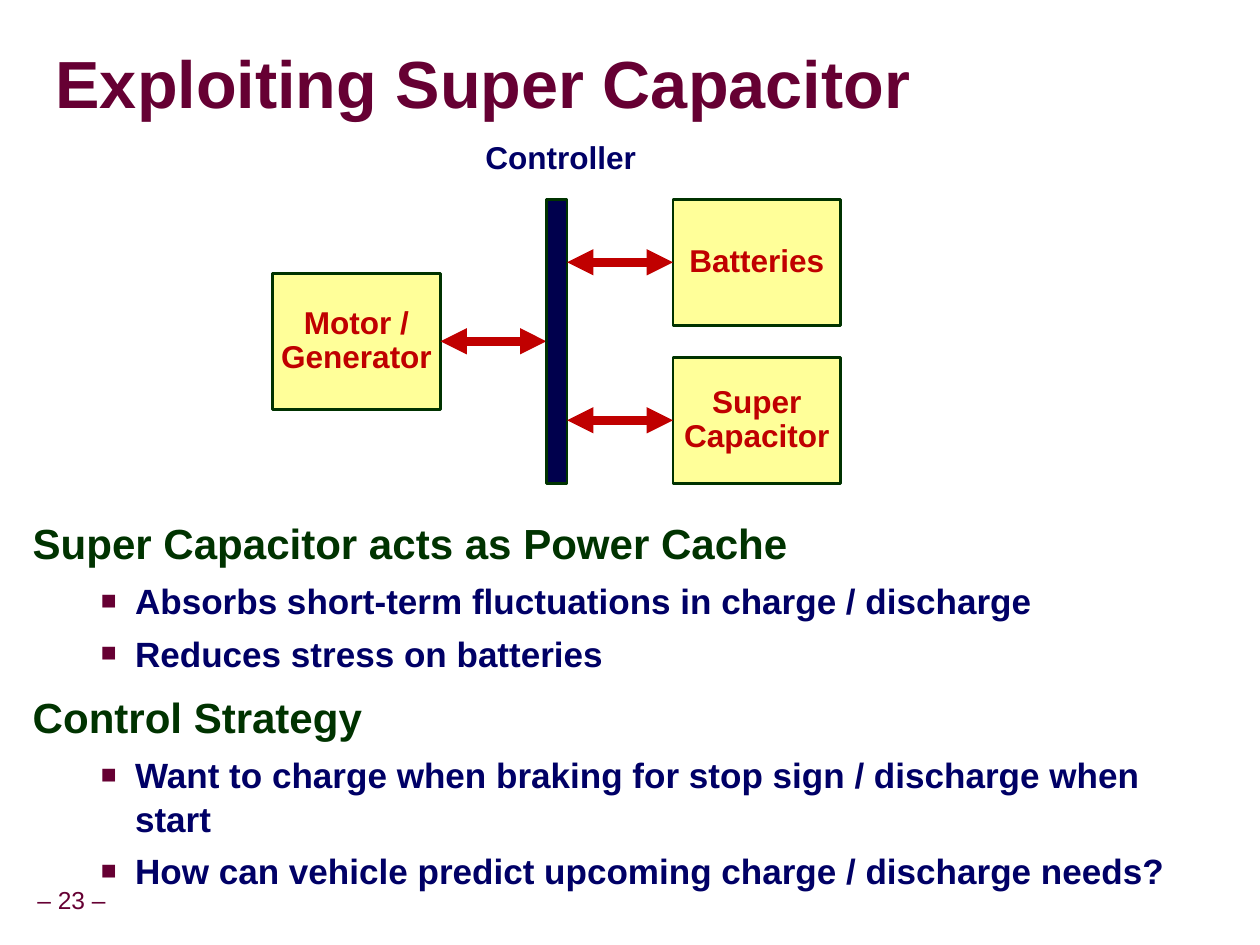
from pptx import Presentation
from pptx import util as u
from pptx.dml.color import RGBColor
from pptx.enum import shapes, text
from pptx.oxml import parse_xml
from pptx.oxml.ns import nsdecls, qn
from lxml import etree

MAROON = RGBColor(0x66, 0x00, 0x33)
GREEN = RGBColor(0x00, 0x33, 0x00)
NAVY = RGBColor(0x00, 0x00, 0x66)
DARK = RGBColor(0x00, 0x00, 0x4D)
RED = RGBColor(0xC0, 0x00, 0x00)
YELLOW = RGBColor(0xFF, 0xFF, 0x99)

TITLE = "Exploiting Super Capacitor"
PAGE = "– 23 –"
BUS = "Controller"
SOURCE = ["Motor /", "Generator"]
STORES = [["Batteries"], ["Super", "Capacitor"]]
SECTIONS = [
    ("Super Capacitor acts as Power Cache", [
        "Absorbs short-term fluctuations in charge / discharge",
        "Reduces stress on batteries"]),
    ("Control Strategy", [
        "Want to charge when braking for stop sign / discharge when start",
        "How can vehicle predict upcoming charge / discharge needs?"]),
]

BOX_W, BOX_H, SOURCE_H = 3.38, 2.54, 2.74
BUS_X, BUS_Y, BUS_W, BUS_H = 11.0, 4.01, 0.42, 5.72
GAP = 2.13

prs = Presentation()
prs.slide_width, prs.slide_height = u.Cm(25.37), u.Cm(19.02)
s = prs.slides.add_slide(prs.slide_layouts[6])


def write(tf, line, size=18, color=NAVY, bold=True, align=None, spacing=0.9,
          before=0, left=0, hang=0, bullet=False, shadow=False):
    p = tf.paragraphs[0]
    if p.runs:
        p = tf.add_paragraph()
    p.alignment, p.line_spacing, p.space_before = align, spacing, u.Pt(before)
    pPr = p._p.get_or_add_pPr()
    pPr.set("marL", str(u.Cm(left)))
    pPr.set("indent", str(-u.Cm(hang)))
    if bullet:
        clr = etree.SubElement(pPr, qn("a:buClr"))
        etree.SubElement(clr, qn("a:srgbClr"), val=str(MAROON))
        etree.SubElement(pPr, qn("a:buSzPct"), val="75000")
        etree.SubElement(pPr, qn("a:buFont"), typeface="Arial")
        etree.SubElement(pPr, qn("a:buChar"), char="■")
    r = p.add_run()
    r.text = line
    r.font.name, r.font.size, r.font.bold = "Arial", u.Pt(size), bold
    r.font.color.rgb = color
    if shadow:
        r.font.fill._xPr.find(qn("a:solidFill")).addnext(parse_xml(
            f'<a:effectLst {nsdecls("a")}><a:outerShdw dist="45720" dir="2700000">'
            '<a:srgbClr val="969696"/></a:outerShdw></a:effectLst>'))


def frame(sp, inset=(0.13, 0.13), wrap=False, anchor=text.MSO_ANCHOR.MIDDLE):
    tf = sp.text_frame
    tf.margin_left = tf.margin_right = u.Cm(inset[0])
    tf.margin_top = tf.margin_bottom = u.Cm(inset[1])
    tf.word_wrap, tf.vertical_anchor = wrap, anchor
    return tf


def label(x, y, w, h, **kw):
    return frame(s.shapes.add_textbox(u.Cm(x), u.Cm(y), u.Cm(w), u.Cm(h)), **kw)


def box(x, y, w, h, fill, lines=()):
    sp = s.shapes.add_shape(shapes.MSO_SHAPE.RECTANGLE,
                            u.Cm(x), u.Cm(y), u.Cm(w), u.Cm(h))
    sp.shadow.inherit = False
    sp.fill.solid()
    sp.fill.fore_color.rgb = fill
    sp.line.color.rgb, sp.line.width = GREEN, u.Pt(1.5)
    tf = frame(sp)
    for line in lines:
        write(tf, line, color=RED, align=text.PP_ALIGN.CENTER)


def arrow(x, y):
    c = s.shapes.add_connector(shapes.MSO_CONNECTOR.STRAIGHT,
                               u.Cm(x), u.Cm(y), u.Cm(x + GAP), u.Cm(y))
    c.line.color.rgb, c.line.width = RED, u.Pt(5)
    spPr = c._element.spPr
    ln = spPr.find(qn("a:ln"))
    for end in ("a:headEnd", "a:tailEnd"):
        etree.SubElement(ln, qn(end), type="triangle")
    etree.SubElement(spPr, qn("a:effectLst"))


write(label(0.6, 17.75, 1.68, 0.79), PAGE, size=14, color=MAROON, bold=False,
      align=text.PP_ALIGN.CENTER)
write(label(1.12, 0.69, 24.18, 2.16, inset=(0, 0), wrap=True), TITLE,
      size=38, color=MAROON, spacing=0.87, shadow=True)

body = label(0.41, 10.36, 24.13, 7.52, inset=(0.25, 0.13), wrap=True,
             anchor=text.MSO_ANCHOR.TOP)
for heading, points in SECTIONS:
    write(body, heading, size=24, color=GREEN, spacing=0.95, before=12,
          left=1.07, hang=1.07)
    for point in points:
        write(body, point, size=20, spacing=1.04, before=5,
              left=2.06, hang=0.69, bullet=True)

mid = BUS_Y + BUS_H / 2
box(BUS_X - GAP - BOX_W, mid - SOURCE_H / 2, BOX_W, SOURCE_H, YELLOW, SOURCE)
arrow(BUS_X - GAP, mid)
box(BUS_X, BUS_Y, BUS_W, BUS_H, DARK)
for i, lines in enumerate(STORES):
    y = BUS_Y + i * (BUS_H - BOX_H)
    box(BUS_X + BUS_W + GAP, y, BOX_W, BOX_H, YELLOW, lines)
    arrow(BUS_X + BUS_W, y + BOX_H / 2)
write(label(9.5, 2.74, 3.58, 0.94, inset=(0.25, 0.13),
            anchor=text.MSO_ANCHOR.TOP), BUS, align=text.PP_ALIGN.CENTER)

prs.save("out.pptx")
